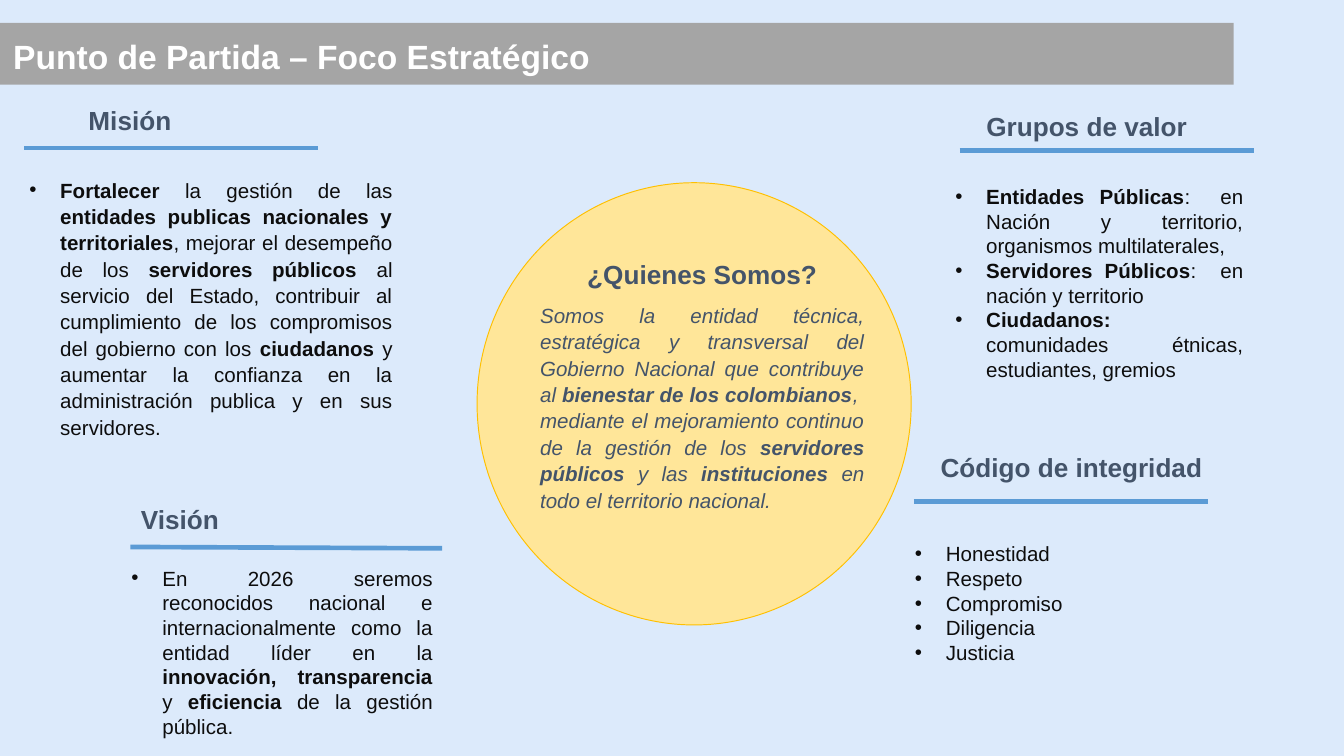
import pptx
import pptx.dml.color
import pptx.enum.shapes
import pptx.enum.text
import pptx.oxml.ns
import pptx.util
from lxml import etree
from pptx.util import Inches

SLATE = "44546A"
INK = "0D0D0D"
BLUE = "5B9BD5"
ALIGN = pptx.enum.text.PP_ALIGN
SHAPES = pptx.enum.shapes.MSO_SHAPE

# Text: ** switches bold on and off
MISSION = [
    "**Fortalecer** la gestión de las **entidades publicas nacionales y territoriales**, "
    "mejorar el desempeño de los **servidores públicos** al servicio del Estado, contribuir "
    "al cumplimiento de los compromisos del gobierno con los **ciudadanos** y aumentar la "
    "confianza en la administración publica y en sus servidores."
]
VISION = [
    "En 2026 seremos reconocidos nacional e internacionalmente como la entidad líder en la "
    "**innovación, transparencia **y **eficiencia** de la gestión pública."
]
VALUE_GROUPS = [
    "**Entidades Públicas**:  en Nación y territorio, organismos multilaterales, ",
    "**Servidores Públicos**:  en nación y territorio",
    "**Ciudadanos:**  comunidades étnicas, estudiantes, gremios",
]
INTEGRITY = ["Honestidad", "Respeto", "Compromiso", "Diligencia", "Justicia"]
WHO_WE_ARE = (
    "Somos la entidad técnica, estratégica y transversal del Gobierno Nacional que contribuye "
    "al **bienestar de los colombianos**,  mediante el mejoramiento continuo de la gestión de "
    "los **servidores públicos **y las **instituciones** en todo el territorio nacional."
)


def rgb(value):
    return pptx.dml.color.RGBColor.from_string(value)


def style(paragraph, size, color, align=ALIGN.JUSTIFY, spacing=None, after=None):
    paragraph.alignment = align
    if spacing:
        paragraph.line_spacing = spacing
    if after:
        paragraph.space_after = pptx.util.Pt(after)
    paragraph.font.name = "Arial"
    paragraph.font.size = pptx.util.Pt(size)
    paragraph.font.color.rgb = rgb(color)


def write_rich(paragraph, text):
    for index, part in enumerate(text.split("**")):
        if part:
            run = paragraph.add_run()
            run.text = part
            run.font.bold = index % 2 == 1


def add_bullet(paragraph):
    properties = paragraph._p.get_or_add_pPr()
    properties.set("marL", str(Inches(0.23)))
    properties.set("indent", str(-Inches(0.23)))
    bullet_font = etree.SubElement(properties, pptx.oxml.ns.qn("a:buFont"))
    bullet_font.set("typeface", "Arial")
    bullet = etree.SubElement(properties, pptx.oxml.ns.qn("a:buChar"))
    bullet.set("char", "•")


def add_text_frame(slide, left, top, width, height):
    box = slide.shapes.add_textbox(Inches(left), Inches(top), Inches(width), Inches(height))
    box.text_frame.word_wrap = True
    box.text_frame.auto_size = pptx.enum.text.MSO_AUTO_SIZE.SHAPE_TO_FIT_TEXT
    return box.text_frame


def add_heading(slide, text, left, top, width):
    heading = add_text_frame(slide, left, top, width, 0.33).paragraphs[0]
    heading.text = text
    style(heading, 14, SLATE, spacing=1.07, after=6)
    heading.font.bold = True


def add_bullets(slide, items, left, top, width, height, spacing=None, after=None):
    frame = add_text_frame(slide, left, top, width, height)
    for index, item in enumerate(items):
        paragraph = frame.add_paragraph() if index else frame.paragraphs[0]
        add_bullet(paragraph)
        style(paragraph, 11, INK, spacing=spacing, after=after)
        write_rich(paragraph, item)


def add_rule(slide, x1, y1, x2, y2):
    rule = slide.shapes.add_connector(
        pptx.enum.shapes.MSO_CONNECTOR.STRAIGHT, Inches(x1), Inches(y1), Inches(x2), Inches(y2))
    rule.line.color.rgb = rgb(BLUE)
    rule.line.width = pptx.util.Pt(2.5)
    etree.SubElement(rule._element.spPr, pptx.oxml.ns.qn("a:effectLst"))


def add_filled_shape(slide, kind, left, top, width, height, fill, line=None):
    shape = slide.shapes.add_shape(
        kind, Inches(left), Inches(top), Inches(width), Inches(height))
    shape.shadow.inherit = False
    shape.fill.solid()
    shape.fill.fore_color.rgb = rgb(fill)
    if line:
        shape.line.color.rgb = rgb(line)
        shape.line.width = pptx.util.Pt(0.5)
    else:
        shape.line.fill.background()
    return shape


def add_title_bar(slide, text):
    bar = add_filled_shape(slide, SHAPES.RECTANGLE, 0, 0.17, 9.18, 0.46, "A5A5A5")
    bar.text_frame.vertical_anchor = pptx.enum.text.MSO_ANCHOR.MIDDLE
    title = bar.text_frame.paragraphs[0]
    title.text = text
    style(title, 18, "FFFFFF", spacing=1.12)
    title.font.bold = True


def add_who_we_are(slide):
    add_filled_shape(slide, SHAPES.OVAL, 3.55, 1.36, 3.23, 3.29, "FFE699", "FFC000")
    frame = add_text_frame(slide, 3.92, 1.86, 2.61, 2.01)
    question = frame.paragraphs[0]
    question.text = "¿Quienes Somos?"
    style(question, 14, SLATE, ALIGN.CENTER, spacing=1.07, after=6)
    question.font.bold = True
    answer = frame.add_paragraph()
    style(answer, 11, SLATE, spacing=1.07, after=6)
    answer.font.italic = True
    write_rich(answer, WHO_WE_ARE)


def main():
    # Widescreen slide, 16:9
    presentation = pptx.Presentation()
    presentation.slide_width = Inches(10)
    presentation.slide_height = Inches(10 * 9 / 16)
    slide = presentation.slides.add_slide(presentation.slide_layouts[6])
    slide.background.fill.solid()
    slide.background.fill.fore_color.rgb = rgb("DCEAFB")

    add_title_bar(slide, "Punto de Partida – Foco Estratégico")
    add_who_we_are(slide)

    # Mission
    add_heading(slide, "Misión", 0.56, 0.71, 4.18)
    add_rule(slide, 0.18, 1.1, 2.37, 1.1)
    add_bullets(slide, MISSION, 0.12, 1.26, 2.9, 2.07, spacing=1.07, after=6)

    # Vision
    add_heading(slide, "Visión", 0.95, 3.68, 0.79)
    add_rule(slide, 0.97, 4.07, 3.29, 4.08)
    add_bullets(slide, VISION, 0.88, 4.16, 2.44, 1.4)

    # Value groups
    add_heading(slide, "Grupos de valor", 7.24, 0.76, 2.6)
    add_rule(slide, 7.14, 1.12, 9.33, 1.12)
    add_bullets(slide, VALUE_GROUPS, 7.01, 1.32, 2.34, 1.58)

    # Integrity code
    add_heading(slide, "Código de integridad", 6.9, 3.29, 2.6)
    add_rule(slide, 6.8, 3.73, 8.99, 3.73)
    add_bullets(slide, INTEGRITY, 6.71, 3.98, 2.34, 1.4)

    presentation.save("out.pptx")


if __name__ == "__main__":
    main()
